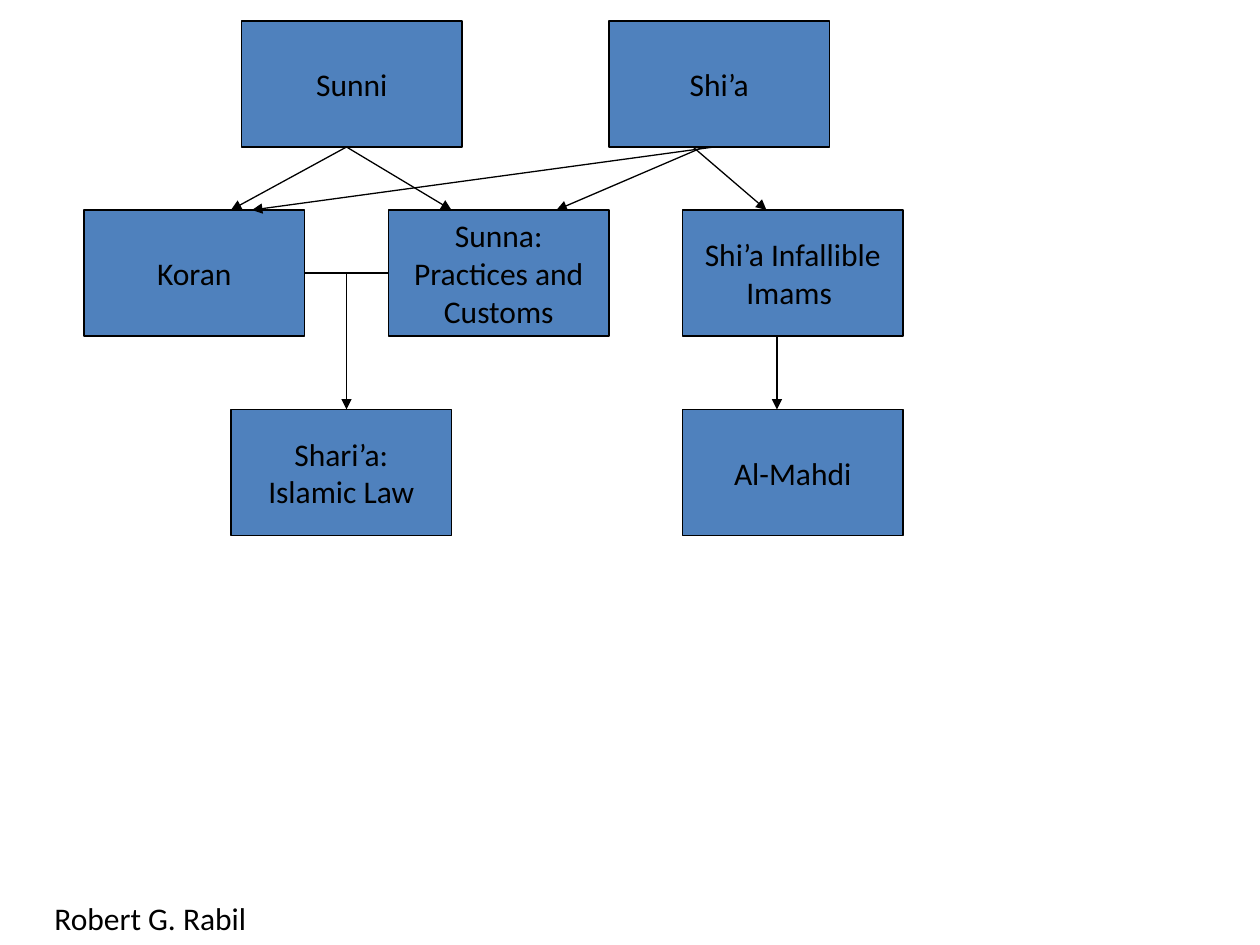
from pptx import Presentation
from pptx import util as u
from pptx.dml.color import RGBColor
from pptx.enum import shapes, text
from pptx.oxml.ns import qn
from lxml import etree

Pt = u.Pt
BLACK, BLUE = "000000", "4F81BD"
BOX_W, BOX_H = 126, 72
# Top edges of the three levels
BRANCH_Y, SOURCE_Y, OUTCOME_Y = 12, 120, 234


def color(hex_value):
    return RGBColor.from_string(hex_value)


def write(frame, lines, size=18, font="Calibri", fill=BLACK,
          align=text.PP_ALIGN.LEFT, anchor=text.MSO_ANCHOR.TOP):
    frame.word_wrap = False
    frame.vertical_anchor = anchor
    for i, line in enumerate(lines):
        paragraph = frame.paragraphs[0] if i == 0 else frame.add_paragraph()
        paragraph.alignment = align
        run = paragraph.add_run()
        run.text = line
        run.font.size = Pt(size)
        run.font.name = font
        run.font.color.rgb = color(fill)


def add_box(slide, left, top, *lines):
    box = slide.shapes.add_shape(shapes.MSO_SHAPE.RECTANGLE, Pt(left), Pt(top),
                                 Pt(BOX_W), Pt(BOX_H))
    box.shadow.inherit = False
    box.fill.solid()
    box.fill.fore_color.rgb = color(BLUE)
    box.line.color.rgb = color(BLACK)
    box.line.width = Pt(0.75)
    write(box.text_frame, lines, align=text.PP_ALIGN.CENTER,
          anchor=text.MSO_ANCHOR.MIDDLE)
    return box


def add_link(slide, x1, y1, x2, y2, arrow=True):
    link = slide.shapes.add_connector(shapes.MSO_CONNECTOR.STRAIGHT,
                                      Pt(x1), Pt(y1), Pt(x2), Pt(y2))
    link.line.color.rgb = color(BLACK)
    link.line.width = Pt(0.75)
    if arrow:
        etree.SubElement(link.line._get_or_add_ln(), qn("a:tailEnd"), type="triangle")
    etree.SubElement(link._element.spPr, qn("a:effectLst"))
    return link


def add_label(slide, left, top, width, height, *lines):
    label = slide.shapes.add_textbox(Pt(left), Pt(top), Pt(width), Pt(height))
    write(label.text_frame, lines)
    label.text_frame.auto_size = text.MSO_AUTO_SIZE.SHAPE_TO_FIT_TEXT


def main():
    prs = Presentation()
    prs.slide_width, prs.slide_height = Pt(720), Pt(540)
    slide = prs.slides.add_slide(prs.slide_layouts[6])

    # Sources and the law drawn from them
    koran = add_box(slide, 48, SOURCE_Y, "Koran")
    sunna = add_box(slide, 222, SOURCE_Y, "Sunna:", "Practices and", "Customs")
    add_box(slide, 132, OUTCOME_Y, "Shari’a:", "Islamic Law")
    middle = SOURCE_Y + BOX_H / 2
    source_bar = add_link(slide, 174, middle, 222, middle, arrow=False)
    source_bar.begin_connect(koran, 3)
    source_bar.end_connect(sunna, 1)
    add_link(slide, 198, middle, 198, OUTCOME_Y)

    # Imams and the Mahdi
    add_box(slide, 390, SOURCE_Y, "Shi’a Infallible", "Imams ")
    add_box(slide, 390, OUTCOME_Y, "Al-Mahdi")

    # Branches, with arrows to their sources
    add_box(slide, 138, BRANCH_Y, "Sunni")
    add_box(slide, 348, BRANCH_Y, "Shi’a")
    for start_x, end_x in [(198, 132), (198, 258), (408, 144), (402, 318), (396, 438)]:
        add_link(slide, start_x, BRANCH_Y + BOX_H, end_x, SOURCE_Y)
    add_link(slide, 444, SOURCE_Y + BOX_H, 444, OUTCOME_Y)

    # Author
    add_label(slide, 24, 510, 125, 29, "Robert G. Rabil")

    prs.save("out.pptx")


if __name__ == "__main__":
    main()
